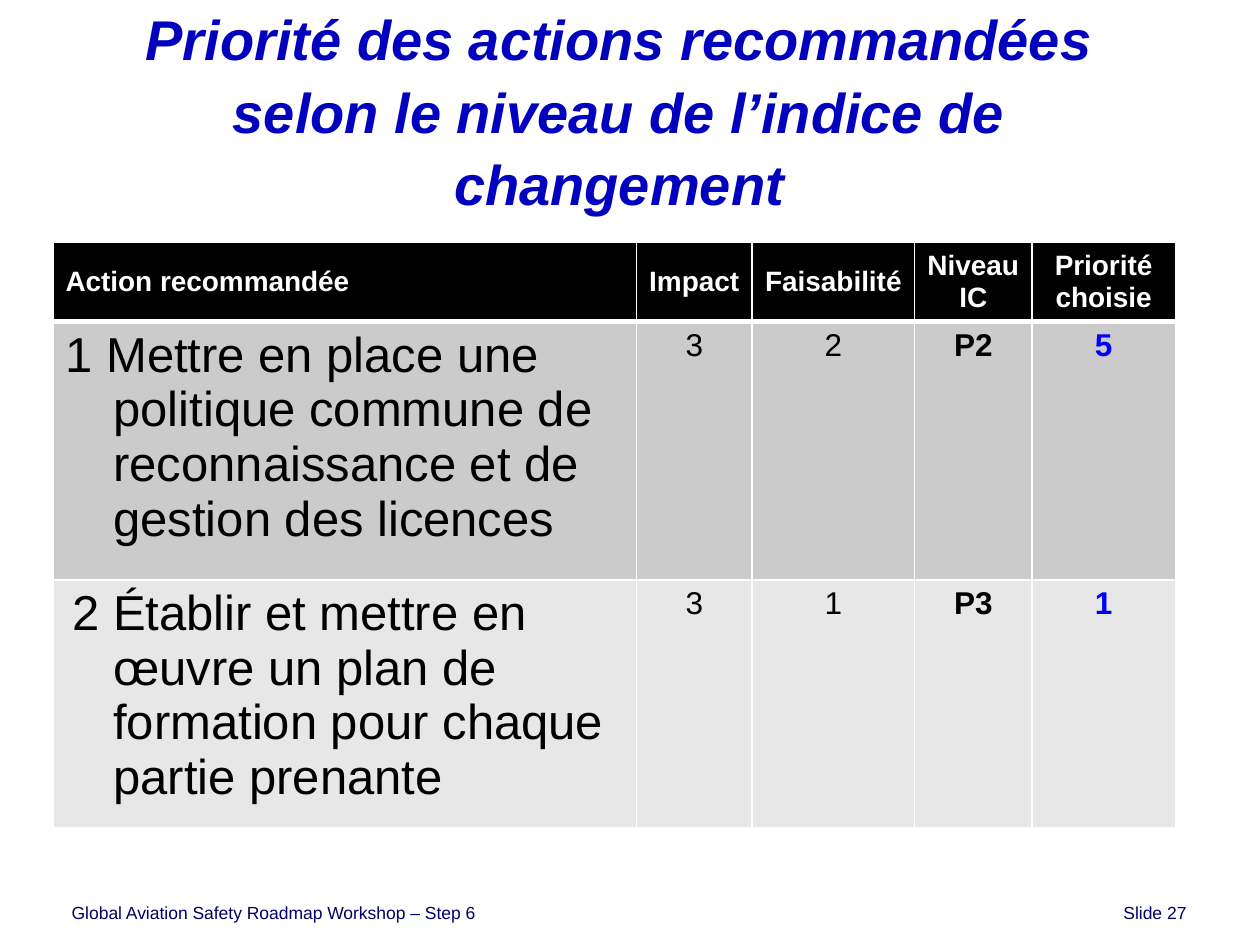
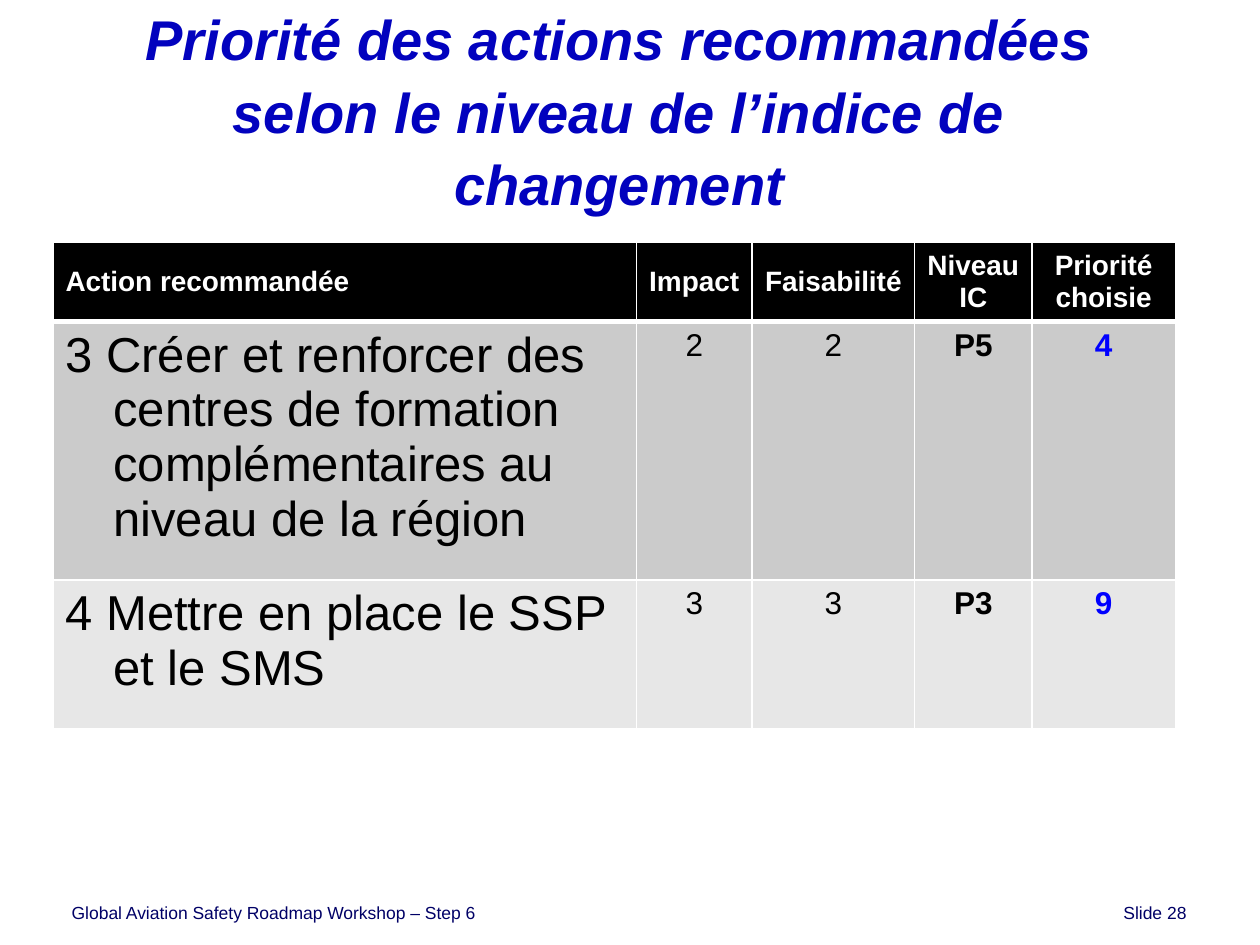
from lxml import etree
from pptx import Presentation
from pptx.dml.color import RGBColor
from pptx.enum.text import MSO_ANCHOR, PP_ALIGN
from pptx.oxml.ns import qn
from pptx.util import Pt

TITLE = "Priorité des actions recommandées selon le niveau de l’indice de changement"
FOOTER = "Global Aviation Safety Roadmap Workshop – Step 6"
HEADERS = ["Action recommandée", "Impact", "Faisabilité", "Niveau IC", "Priorité choisie"]

# Each action: row height, first-line indent, cell texts
SLIDES = [
    (27, [
        (147.5, -27.36, ["1 Mettre en place une politique commune de reconnaissance "
                         "et de gestion des licences", "3", "2", "P2", "5"]),
        (132, -23.5, ["2 Établir et mettre en œuvre un plan de formation "
                      "pour chaque partie prenante", "3", "1", "P3", "1"]),
    ]),
    (28, [
        (147.5, -27.36, ["3 Créer et renforcer des centres de formation "
                         "complémentaires au niveau de la région", "2", "2", "P5", "4"]),
        (85, -27.36, ["4 Mettre en place le SSP et le SMS", "3", "3", "P3", "9"]),
    ]),
]

FONT = "Arial"
WHITE, BLACK = "FFFFFF", "000000"
TITLE_BLUE, CHOICE_BLUE, FOOTER_BLUE = "0202BE", "0000FF", "000066"
BANDS = ["CBCBCB", "E7E7E7"]

SLIDE_W, SLIDE_H = 720, 540
TABLE_X, TABLE_Y = 30.24, 138.24
COL_WIDTHS = [333.36, 66.24, 92.88, 66.96, 82.08]
HEADER_H = 43
HANGING = 27.36
FOOTER_LEFT, FOOTER_RIGHT = 41, 678
THIN, THICK = 1, 3


def rgb(color):
    return RGBColor.from_string(color)


def write(tf, text, size, color, bold=False, italic=False, align=PP_ALIGN.LEFT):
    p = tf.paragraphs[0]
    p.alignment = align
    r = p.add_run()
    r.text = text
    font = r.font
    font.name, font.size, font.bold, font.italic = FONT, Pt(size), bold, italic
    font.color.rgb = rgb(color)
    return p


def add_text_box(s, x, y, w, h):
    tf = s.shapes.add_textbox(Pt(x), Pt(y), Pt(w), Pt(h)).text_frame
    tf.word_wrap = True
    return tf


def add_title(s):
    tf = add_text_box(s, 36, 29.52, 635.76, 64.8)
    tf.vertical_anchor = MSO_ANCHOR.MIDDLE
    p = write(tf, TITLE, 32, TITLE_BLUE, bold=True, italic=True, align=PP_ALIGN.CENTER)
    p.line_spacing = 1.08


def add_footer(s, number):
    """Workshop name on the left, slide number at a right tab stop."""
    tf = add_text_box(s, 0, 511.92, SLIDE_W, 23.04)
    tf.margin_left, tf.margin_right = Pt(FOOTER_LEFT), 0
    p = write(tf, f"{FOOTER}\tSlide {number}", 10, FOOTER_BLUE)
    tabs = etree.SubElement(p._p.get_or_add_pPr(), qn("a:tabLst"))
    etree.SubElement(tabs, qn("a:tab"), pos=str(Pt(FOOTER_RIGHT - FOOTER_LEFT)), algn="r")


def set_borders(cell, top, bottom):
    tcPr = cell._tc.get_or_add_tcPr()
    sides = [("L", THIN), ("R", THIN), ("T", top), ("B", bottom)]
    for i, (side, width) in enumerate(sides):
        ln = etree.Element(qn(f"a:ln{side}"), w=str(Pt(width)))
        fill = etree.SubElement(ln, qn("a:solidFill"))
        etree.SubElement(fill, qn("a:srgbClr"), val=WHITE)
        tcPr.insert(i, ln)


def style_cell(cell, fill, top=THIN, bottom=THIN):
    cell.fill.solid()
    cell.fill.fore_color.rgb = rgb(fill)
    set_borders(cell, top, bottom)


def add_action_table(s, actions):
    heights = [HEADER_H] + [height for height, _, _ in actions]
    table = s.shapes.add_table(len(heights), len(HEADERS), Pt(TABLE_X), Pt(TABLE_Y),
                               Pt(sum(COL_WIDTHS)), Pt(sum(heights))).table
    table.first_row = table.horz_banding = False
    for column, width in zip(table.columns, COL_WIDTHS):
        column.width = Pt(width)
    for row, height in zip(table.rows, heights):
        row.height = Pt(height)

    for col, header in enumerate(HEADERS):
        cell = table.cell(0, col)
        style_cell(cell, BLACK, bottom=THICK)
        cell.vertical_anchor = MSO_ANCHOR.MIDDLE
        write(cell.text_frame, header, 16, WHITE, bold=True,
              align=PP_ALIGN.CENTER if col else PP_ALIGN.LEFT)

    for row, (_, indent, texts) in enumerate(actions, 1):
        for col, text in enumerate(texts):
            cell = table.cell(row, col)
            style_cell(cell, BANDS[row - 1], top=THICK if row == 1 else THIN)
            if col == 0:
                pPr = write(cell.text_frame, text, 28, BLACK)._p.get_or_add_pPr()
                pPr.set("marL", str(Pt(HANGING)))
                pPr.set("indent", str(Pt(indent)))
            else:
                write(cell.text_frame, text, 18, CHOICE_BLUE if col == 4 else BLACK,
                      bold=col >= 3, align=PP_ALIGN.CENTER)


def main():
    prs = Presentation()
    prs.slide_width, prs.slide_height = Pt(SLIDE_W), Pt(SLIDE_H)
    for number, actions in SLIDES:
        s = prs.slides.add_slide(prs.slide_layouts[6])
        s.background.fill.solid()
        s.background.fill.fore_color.rgb = rgb(WHITE)
        add_title(s)
        add_action_table(s, actions)
        add_footer(s, number)
    prs.save("out.pptx")


if __name__ == "__main__":
    main()
